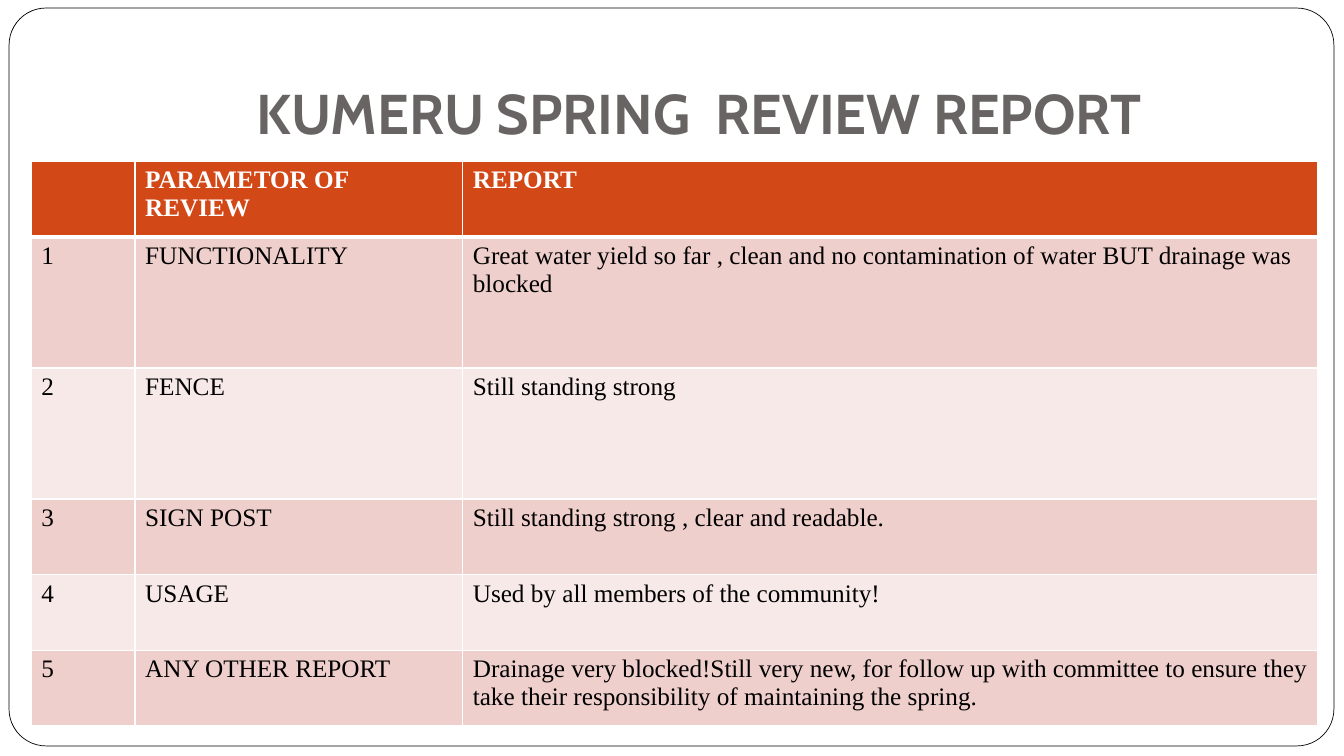
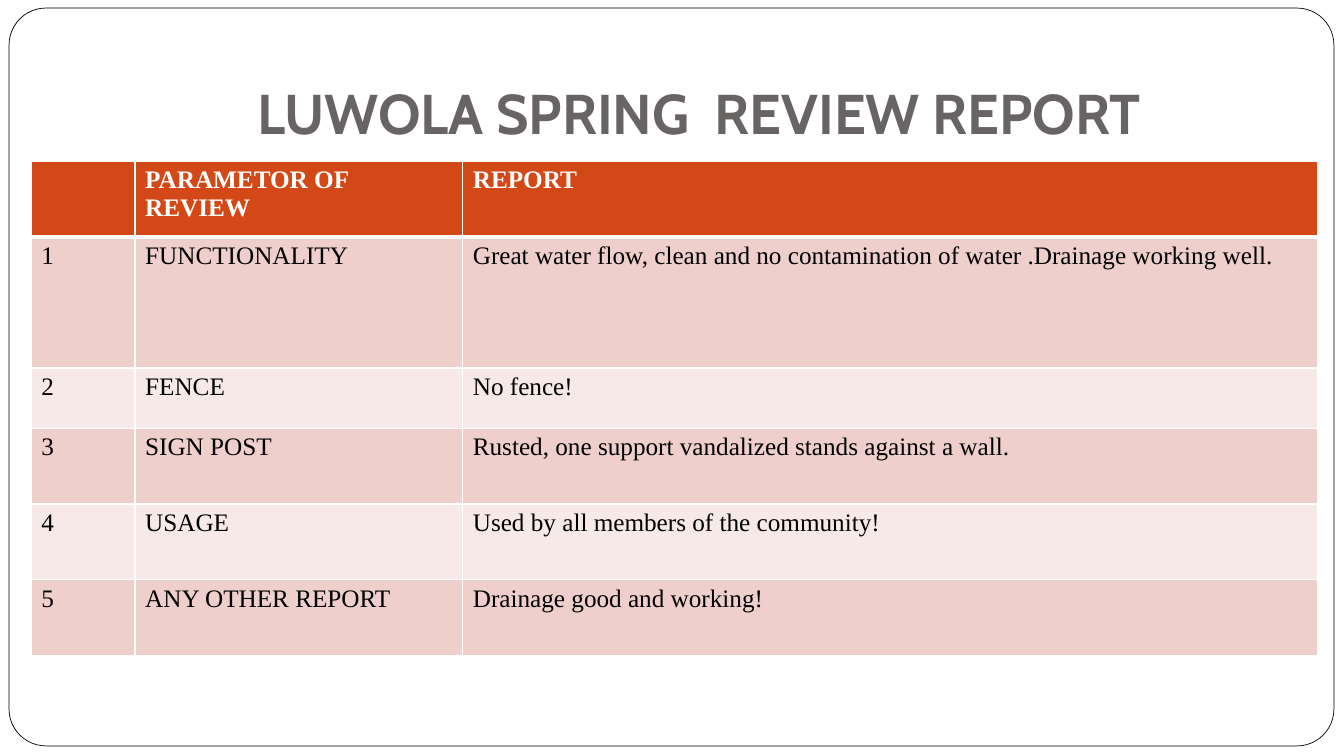
from dataclasses import dataclass

from lxml.etree import SubElement
from pptx import Presentation
from pptx.dml.color import RGBColor
from pptx.enum.shapes import MSO_SHAPE as Shape
from pptx.enum.text import MSO_ANCHOR as Anchor, PP_ALIGN as Align
from pptx.oxml.ns import qn
from pptx.presentation import Presentation as Deck
from pptx.slide import Slide
from pptx.table import _Cell as Cell
from pptx.util import Inches, Pt

WHITE = RGBColor(0xFF, 0xFF, 0xFF)
BLACK = RGBColor(0x00, 0x00, 0x00)
TITLE_GRAY = RGBColor(0x69, 0x64, 0x64)
HEADER_ORANGE = RGBColor(0xD3, 0x48, 0x17)
BAND_COLORS = (RGBColor(0xEF, 0xCF, 0xCC), RGBColor(0xF7, 0xE9, 0xE8))

TITLE_FONT = "Cabin"
TABLE_FONT = "Times New Roman"

COLUMN_WIDTHS = (1.03, 3.25, 8.48)
HEADER_HEIGHT = 0.75
HEADINGS = ("", "PARAMETOR OF REVIEW", "REPORT")
PARAMETERS = ("FUNCTIONALITY", "FENCE", "SIGN POST", "USAGE", "ANY OTHER REPORT")


@dataclass(frozen=True)
class Finding:
    report: str
    height: float = 0.75


@dataclass(frozen=True)
class Review:
    title: str
    findings: tuple[Finding, ...]


REVIEWS = (
    Review("KUMERU SPRING  REVIEW REPORT ", (
        Finding("Great water yield so far , clean and no contamination of water "
                "BUT drainage was blocked", 1.3),
        Finding("Still standing strong", 1.3),
        Finding("Still standing strong , clear and readable."),
        Finding("Used by all members of the community!"),
        Finding("Drainage very blocked!Still very new, for follow up with committee "
                "to ensure they take their responsibility of maintaining the spring."),
    )),
    Review("LUWOLA SPRING  REVIEW REPORT ", (
        Finding("Great water flow, clean and no contamination of water "
                ".Drainage working well.", 1.3),
        Finding("No fence!", 0.6),
        Finding("Rusted, one support vandalized stands against a wall."),
        Finding("Used by all members of the community!"),
        Finding("Drainage good and working!"),
    )),
)


def add_frame(page: Slide) -> None:
    frame = page.shapes.add_shape(Shape.ROUNDED_RECTANGLE, Inches(0.09), Inches(0.08),
                                  Inches(13.14), Inches(7.32))
    frame.adjustments[0] = 0.05
    frame.shadow.inherit = False
    frame.fill.solid()
    frame.fill.fore_color.rgb = WHITE
    frame.line.color.rgb = BLACK
    frame.line.width = Pt(0.5)


def add_title(page: Slide, title: str) -> None:
    box = page.shapes.add_textbox(Inches(1.33), Inches(0.3), Inches(11.33), Inches(1.25))
    frame = box.text_frame
    frame.word_wrap = True
    frame.vertical_anchor = Anchor.BOTTOM
    frame.margin_bottom = Inches(0.1)
    para = frame.paragraphs[0]
    para.text = title
    para.alignment = Align.CENTER
    font = para.font
    font.name, font.size, font.bold = TITLE_FONT, Pt(40), True
    font.color.rgb = TITLE_GRAY


def set_borders(cell: Cell, top: float, bottom: float) -> None:
    """Draw white cell borders, 1 pt at the sides; call before filling the cell."""
    properties = cell._tc.get_or_add_tcPr()
    for side, width in (("L", 1), ("R", 1), ("T", top), ("B", bottom)):
        line = SubElement(properties, qn(f"a:ln{side}"), w=str(Pt(width)))
        fill = SubElement(line, qn("a:solidFill"))
        SubElement(fill, qn("a:srgbClr"), val=str(WHITE))


def style_cell(cell: Cell, text: str, row: int) -> None:
    is_header = row == 0
    set_borders(cell, top=3 if row == 1 else 1, bottom=3 if is_header else 1)
    cell.fill.solid()
    cell.fill.fore_color.rgb = HEADER_ORANGE if is_header else BAND_COLORS[(row - 1) % 2]
    cell.text = text
    font = cell.text_frame.paragraphs[0].font
    font.name, font.size, font.bold = TABLE_FONT, Pt(18), is_header
    font.color.rgb = WHITE if is_header else BLACK


def add_findings(page: Slide, findings: tuple[Finding, ...]) -> None:
    rows = [HEADINGS] + [
        (str(number), parameter, finding.report)
        for number, (parameter, finding) in enumerate(zip(PARAMETERS, findings), 1)
    ]
    heights = [HEADER_HEIGHT] + [finding.height for finding in findings]
    table = page.shapes.add_table(
        len(rows), len(COLUMN_WIDTHS), Inches(0.31), Inches(1.6),
        Inches(sum(COLUMN_WIDTHS)), Inches(sum(heights))).table
    for column, width in zip(table.columns, COLUMN_WIDTHS):
        column.width = Inches(width)
    for row, (texts, height) in enumerate(zip(rows, heights)):
        table.rows[row].height = Inches(height)
        for column, text in enumerate(texts):
            style_cell(table.cell(row, column), text, row)


def add_review(deck: Deck, review: Review) -> None:
    page = deck.slides.add_slide(deck.slide_layouts[6])
    add_frame(page)
    add_title(page, review.title)
    add_findings(page, review.findings)


def main() -> None:
    deck = Presentation()
    deck.slide_width, deck.slide_height = Inches(13.33), Inches(7.5)
    for review in REVIEWS:
        add_review(deck, review)
    deck.save("out.pptx")


if __name__ == "__main__":
    main()
